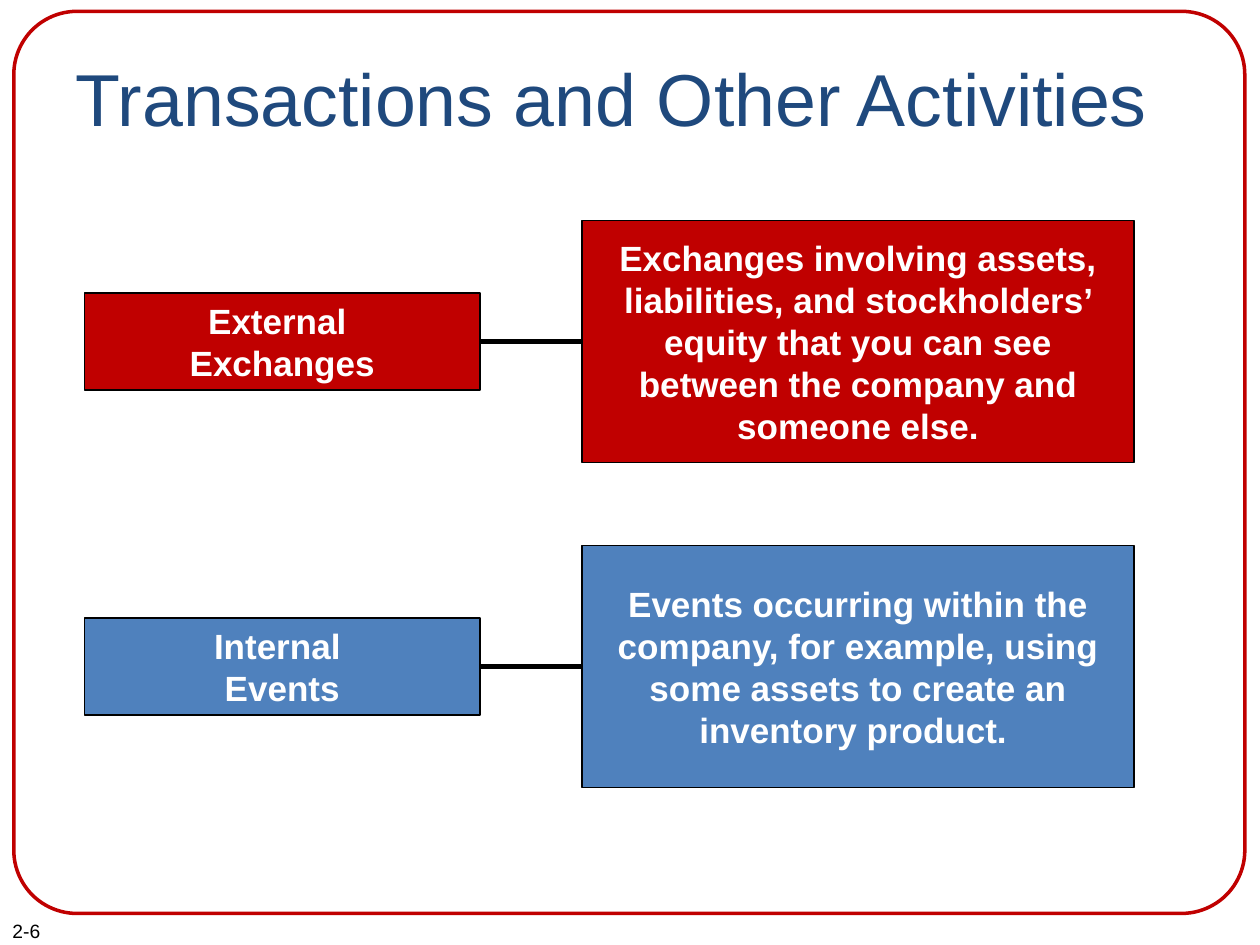
from dataclasses import dataclass

from lxml.etree import SubElement
from pptx import Presentation
from pptx.dml.color import RGBColor
from pptx.enum.shapes import MSO_CONNECTOR, MSO_SHAPE
from pptx.enum.text import MSO_ANCHOR, PP_ALIGN
from pptx.oxml.ns import qn
from pptx.util import Inches, Pt


@dataclass(frozen=True)
class Theme:
    font: str = "Arial"
    red: str = "C00000"
    blue: str = "4F81BD"
    navy: str = "1F497D"
    black: str = "000000"
    white: str = "FFFFFF"
    title_size: int = 42
    box_size: int = 20
    number_size: int = 11


THEME = Theme()

# Shared geometry of the two rows, in inches
LABEL_LEFT, LABEL_WIDTH, LABEL_HEIGHT = 0.67, 3.14, 0.77
DETAIL_LEFT, DETAIL_WIDTH, DETAIL_HEIGHT = 4.62, 4.38, 1.92
FIRST_CENTER, ROW_STEP = 2.71, 2.58

ROWS = [
    ("External \vExchanges",
     "Exchanges involving assets, liabilities, and stockholders’ equity "
     "that you can see between the company and someone else.", THEME.red),
    ("Internal \vEvents",
     "Events occurring within the company, for example, using some assets "
     "to create an inventory product. ", THEME.blue),
]


def set_text(shape, text, *, size, color, bold=False, align=PP_ALIGN.LEFT,
             anchor=MSO_ANCHOR.TOP):
    frame = shape.text_frame
    frame.word_wrap = True
    frame.vertical_anchor = anchor
    frame.text = text
    paragraph = frame.paragraphs[0]
    paragraph.alignment = align
    for run in paragraph.runs:
        run.font.name = THEME.font
        run.font.size = Pt(size)
        run.font.bold = bold
        run.font.color.rgb = RGBColor.from_string(color)


def set_line(shape, color, width):
    shape.line.color.rgb = RGBColor.from_string(color)
    shape.line.width = Pt(width)


def add_frame(slide):
    frame = slide.shapes.add_shape(MSO_SHAPE.ROUNDED_RECTANGLE, Inches(0.11),
                                   Inches(0.09), Inches(9.77), Inches(7.16))
    frame.adjustments[0] = 0.07
    frame.shadow.inherit = False
    frame.fill.background()
    set_line(frame, THEME.red, 2)
    # Keep the frame behind the title
    slide.shapes.element.insert(2, frame.element)


def add_title(slide, text):
    title = slide.shapes.title
    title.left, title.top = Inches(0.5), Inches(0.3)
    title.width, title.height = Inches(9), Inches(1.25)
    title.text_frame.margin_top = Inches(0.12)
    set_text(title, text, size=THEME.title_size, color=THEME.navy)


def add_box(group, text, left, center, width, height, fill):
    box = group.shapes.add_shape(MSO_SHAPE.RECTANGLE, Inches(left),
                                 Inches(center - height / 2),
                                 Inches(width), Inches(height))
    box.shadow.inherit = False
    box.fill.solid()
    box.fill.fore_color.rgb = RGBColor.from_string(fill)
    set_line(box, THEME.black, 0.75)
    set_text(box, text, size=THEME.box_size, color=THEME.white, bold=True,
             align=PP_ALIGN.CENTER, anchor=MSO_ANCHOR.MIDDLE)
    return box


def add_link(group, label, detail):
    link = group.shapes.add_connector(MSO_CONNECTOR.STRAIGHT, 0, 0, 0, 0)
    link.begin_connect(label, 3)
    link.end_connect(detail, 1)
    set_line(link, THEME.black, 3)
    SubElement(link.element.spPr, qn("a:effectLst"))


def add_row(slide, label_text, detail_text, fill, center):
    group = slide.shapes.add_group_shape()
    label = add_box(group, label_text, LABEL_LEFT, center, LABEL_WIDTH,
                    LABEL_HEIGHT, fill)
    detail = add_box(group, detail_text, DETAIL_LEFT, center, DETAIL_WIDTH,
                     DETAIL_HEIGHT, fill)
    add_link(group, label, detail)


def add_page_number(slide, text):
    number = slide.shapes.add_textbox(Inches(0), Inches(7.25),
                                      Inches(1.42), Inches(0.29))
    set_text(number, text, size=THEME.number_size, color=THEME.black)


def main():
    presentation = Presentation()
    presentation.slide_width, presentation.slide_height = Inches(10), Inches(7.5)
    slide = presentation.slides.add_slide(presentation.slide_layouts[5])

    # Frame, title and page number
    add_frame(slide)
    add_title(slide, "Transactions and Other Activities")
    add_page_number(slide, "2-6")

    # Each kind of activity linked to its explanation
    for index, (label, detail, fill) in enumerate(ROWS):
        add_row(slide, label, detail, fill, FIRST_CENTER + index * ROW_STEP)

    presentation.save("out.pptx")


if __name__ == "__main__":
    main()
